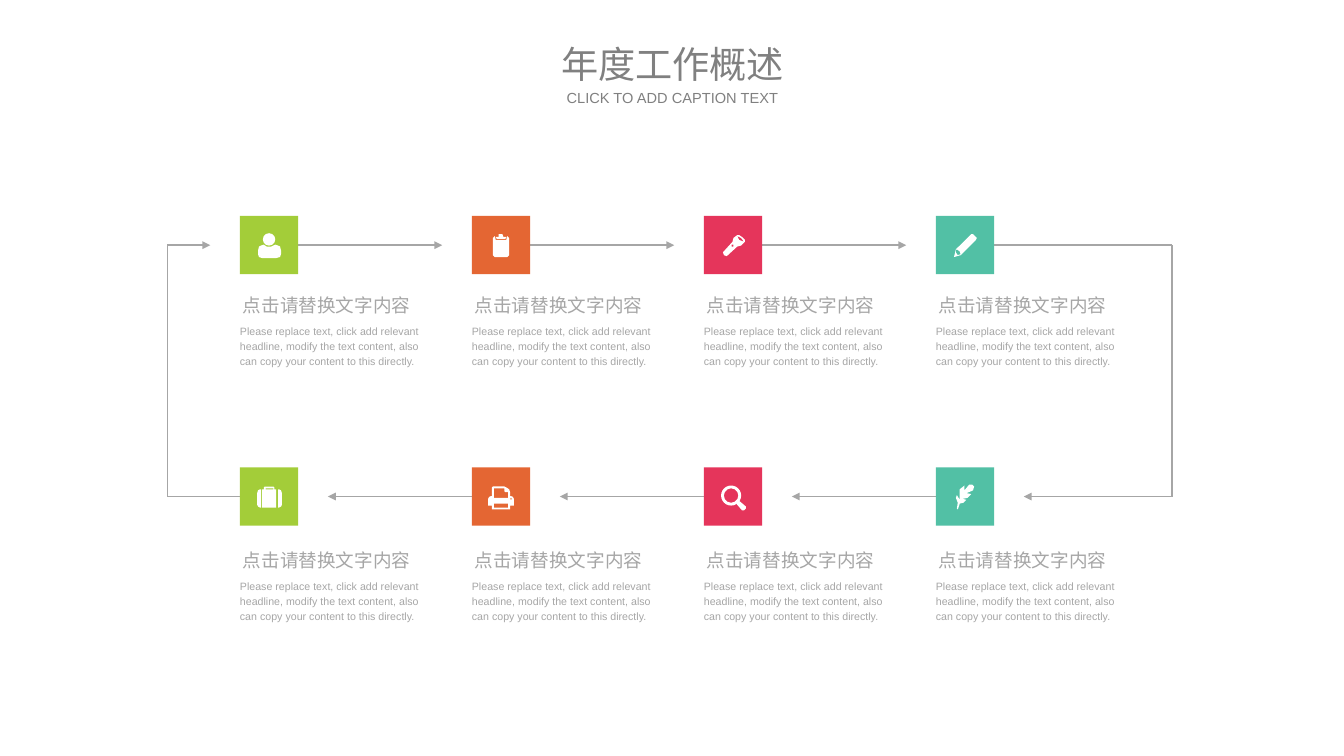
from dataclasses import dataclass

from lxml import etree
from pptx import Presentation
from pptx.dml.color import RGBColor
from pptx.enum.shapes import MSO_CONNECTOR as Connector, MSO_SHAPE as Shape
from pptx.enum.text import MSO_ANCHOR as Anchor, MSO_AUTO_SIZE as AutoSize, PP_ALIGN as Align
from pptx.oxml.ns import qn
from pptx.util import Inches, Pt


@dataclass(frozen=True)
class Theme:
    font: str = "Arial"
    title: str = "808080"
    grey: str = "A6A6A6"
    white: str = "FFFFFF"
    tiles: tuple = ("A3CD39", "E46633", "E5355B", "52C0A5")
    title_size: int = 28
    caption_size: int = 11
    heading_size: int = 14
    body_size: int = 8


@dataclass(frozen=True)
class Icon:
    outlines: tuple
    round_part: tuple = ()


THEME = Theme()
HEADING = "点击请替换文字内容"
BODY = ("Please replace text, click add relevant headline, modify the text content, "
        "also can copy your content to this directly.")

TILE = 0.61
FIRST, LAST = 2.51, 9.79
COLUMNS = [FIRST + (LAST - FIRST) * index / 3 for index in range(4)]
TOP_ROW, BOTTOM_ROW = 2.26, 4.89
HEADING_TOPS = {TOP_ROW: 3.03, BOTTOM_ROW: 5.7}
ARROW_GAP = 0.31
LOOP_LEFT, LOOP_RIGHT = 1.75, 12.26
ICON_UNIT = Inches(0.01)

PERSON = Icon(
    (((43, 36), (42, 32), (40, 31), (37, 30), (35, 31), (33, 32), (28, 32), (25, 30),
      (22, 31), (20, 32), (19, 36), (19, 40), (20, 43), (23, 44), (38, 44), (42, 43), (43, 40)),),
    (Shape.OVAL, 0.24, 0.18, 0.13))
CLIPBOARD = Icon((
    ((37, 21), (36, 25), (25, 25), (24, 21), (22, 23), (22, 41), (24, 43), (37, 43),
     (39, 41), (39, 23)),
    ((35, 24), (36, 22), (33, 22), (32, 19), (28, 19), (28, 22), (25, 22), (26, 24))))
FLASHLIGHT = Icon((
    ((40, 22), (37, 20), (35, 20), (31, 23), (30, 27), (20, 38), (21, 41), (24, 42),
     (35, 32), (39, 31), (43, 27), (43, 25)),
    ((37, 25), (35, 21), (39, 23), (42, 27)),
    ((29, 32), (29, 30), (31, 30), (31, 32))))
PENCIL = Icon((
    ((41, 21), (39, 19), (37, 19), (21, 35), (19, 43), (26, 41), (42, 25), (43, 23)),
    ((26, 40), (23, 41), (21, 38), (21, 36), (22, 35), (25, 37))))
SUITCASE = Icon((
    ((19, 24), (18, 27), (18, 39), (19, 41), (21, 42), (22, 42), (22, 23), (21, 23)),
    ((23, 23), (25, 23), (25, 21), (26, 20), (35, 20), (36, 21), (36, 23), (38, 23),
     (38, 42), (23, 42)),
    ((27, 22), (35, 22), (35, 23), (27, 23)),
    ((40, 23), (41, 23), (43, 24), (44, 27), (44, 39), (43, 41), (41, 42), (40, 42))))
PRINTER = Icon((
    ((43, 31), (41, 30), (40, 30), (40, 26), (39, 23), (36, 21), (34, 20), (22, 20),
     (21, 21), (21, 30), (20, 30), (18, 31), (17, 33), (17, 40), (21, 40), (21, 44),
     (40, 44), (40, 40), (44, 40), (44, 33)),
    ((38, 32), (23, 32), (23, 22), (34, 22), (34, 25), (35, 26), (38, 26)),
    ((38, 42), (23, 42), (23, 38), (38, 38)),
    ((41, 34), (40, 33), (41, 32), (42, 33))))
MAGNIFIER = Icon(
    (((44, 41), (37, 35), (34, 38), (40, 45), (42, 45), (44, 43)),),
    (Shape.DONUT, 0.18, 0.19, 0.21))
FEATHER = Icon((
    ((23, 44), (25, 38), (29, 37), (32, 34), (28, 33), (33, 32), (37, 28), (32, 27),
     (37, 25), (39, 24), (40, 20), (38, 18), (35, 18), (30, 24), (30, 19), (25, 23),
     (25, 34), (22, 29), (21, 32), (23, 37), (22, 43)),))

ROWS = {TOP_ROW: (PERSON, CLIPBOARD, FLASHLIGHT, PENCIL),
        BOTTOM_ROW: (SUITCASE, PRINTER, MAGNIFIER, FEATHER)}


def paint(shape, color):
    shape.shadow.inherit = False
    shape.fill.solid()
    shape.fill.fore_color.rgb = RGBColor.from_string(color)
    shape.line.fill.background()


def add_icon(shapes, icon, left, top):
    first, *others = icon.outlines
    builder = shapes.build_freeform(*first[0], scale=ICON_UNIT)
    builder.add_line_segments(first[1:], close=True)
    for outline in others:
        builder.move_to(*outline[0])
        builder.add_line_segments(outline[1:], close=True)
    paint(builder.convert_to_shape(Inches(left), Inches(top)), THEME.white)
    if icon.round_part:
        kind, x, y, size = icon.round_part
        part = shapes.add_shape(kind, Inches(left + x), Inches(top + y), Inches(size), Inches(size))
        paint(part, THEME.white)
        if kind == Shape.DONUT:
            part.adjustments[0] = 0.14


def add_tile(page, icon, color, left, top):
    group = page.shapes.add_group_shape()
    tile = group.shapes.add_shape(
        Shape.RECTANGLE, Inches(left), Inches(top), Inches(TILE), Inches(TILE))
    paint(tile, color)
    add_icon(group.shapes, icon, left, top)


def add_text(page, text, left, top, width, height, size, color):
    box = page.shapes.add_textbox(Inches(left), Inches(top), Inches(width), Inches(height))
    frame = box.text_frame
    frame.margin_left = frame.margin_right = frame.margin_top = frame.margin_bottom = 0
    frame.word_wrap = True
    frame.auto_size = AutoSize.SHAPE_TO_FIT_TEXT
    frame.text = text
    para = frame.paragraphs[0]
    span = para.runs[0]
    span.font.name = THEME.font
    span.font.size = Pt(size)
    span.font.color.rgb = RGBColor.from_string(color)
    return frame, para


def add_title(page, text, top, height, size):
    frame, para = add_text(page, text, 5.77, top, 2.53, height, size, THEME.title)
    frame.vertical_anchor = Anchor.MIDDLE
    para.alignment = Align.CENTER


def add_stage_text(page, left, top):
    _, heading = add_text(page, HEADING, left + 0.03, top, 2.49, 0.26,
                          THEME.heading_size, THEME.grey)
    heading.line_spacing = 1.2
    heading.space_before = Pt(2.8)
    _, body = add_text(page, BODY, left, top + 0.34, 2.02, 0.47, THEME.body_size, THEME.grey)
    body.line_spacing = 1.2


def add_line(page, start, end, arrow=False):
    line = page.shapes.add_connector(
        Connector.STRAIGHT, *(Inches(value) for value in (*start, *end)))
    line.line.color.rgb = RGBColor.from_string(THEME.grey)
    line.line.width = Pt(1)
    properties = line.element.spPr
    if arrow:
        etree.SubElement(properties.find(qn("a:ln")), qn("a:tailEnd"), type="triangle")
    etree.SubElement(properties, qn("a:effectLst"))


def add_flow(page):
    upper, lower = TOP_ROW + TILE / 2, BOTTOM_ROW + TILE / 2
    for left, following in zip(COLUMNS, COLUMNS[1:]):
        add_line(page, (left + TILE, upper), (following - ARROW_GAP, upper), arrow=True)
        add_line(page, (following, lower), (left + TILE + ARROW_GAP, lower), arrow=True)
    add_line(page, (LAST + TILE, upper), (LOOP_RIGHT, upper))
    add_line(page, (LOOP_RIGHT, upper), (LOOP_RIGHT, lower))
    add_line(page, (LOOP_RIGHT, lower), (LAST + TILE + ARROW_GAP, lower), arrow=True)
    add_line(page, (FIRST, lower), (LOOP_LEFT, lower))
    add_line(page, (LOOP_LEFT, lower), (LOOP_LEFT, upper))
    add_line(page, (LOOP_LEFT, upper), (FIRST - ARROW_GAP, upper), arrow=True)


def main():
    deck = Presentation()
    deck.slide_width, deck.slide_height = Inches(14.06), Inches(7.91)
    page = deck.slides.add_slide(deck.slide_layouts[6])
    add_flow(page)
    for top, icons in ROWS.items():
        for left, icon, color in zip(COLUMNS, icons, THEME.tiles):
            add_tile(page, icon, color, left, top)
            add_stage_text(page, left, HEADING_TOPS[top])
    add_title(page, "年度工作概述", 0.42, 0.49, THEME.title_size)
    add_title(page, "CLICK TO ADD CAPTION TEXT", 0.93, 0.19, THEME.caption_size)
    deck.save("out.pptx")


if __name__ == "__main__":
    main()
